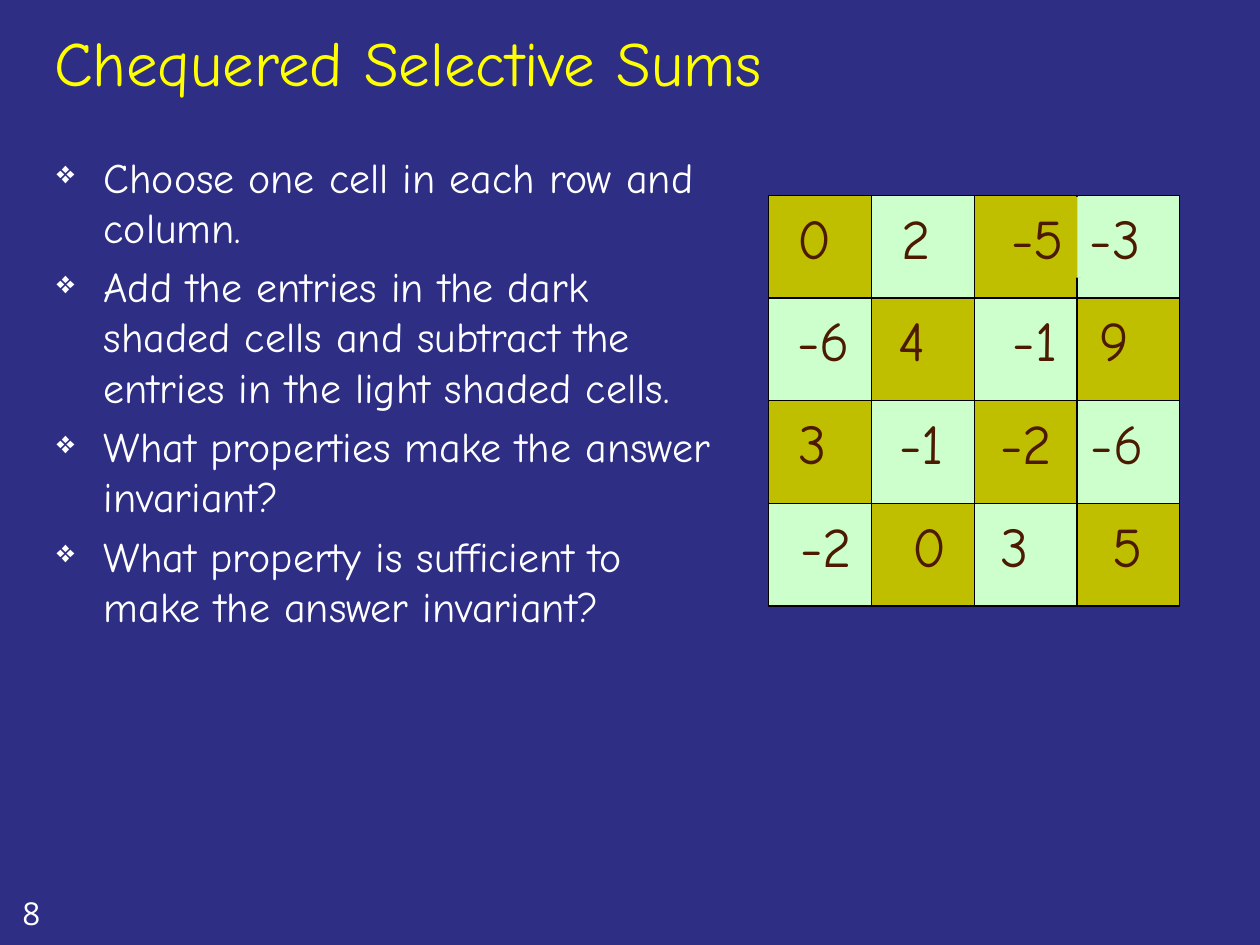
import pptx
import pptx.dml.color
import pptx.enum.shapes
import pptx.enum.text
import pptx.oxml
import pptx.oxml.ns
import pptx.util
from dataclasses import dataclass

Cm, Pt = pptx.util.Cm, pptx.util.Pt
Anchor = pptx.enum.text.MSO_ANCHOR
Fit = pptx.enum.text.MSO_AUTO_SIZE

TITLE = "Chequered Selective Sums"
TASKS = [
    "Choose one cell in each row and column.",
    "Add the entries in the dark shaded cells and subtract the entries in the light shaded cells.",
    "What properties make the answer invariant?",
    "What property is sufficient to make the answer invariant?",
]
PAGE = "8"

# Each entry is its number and the left edge of its label in cm.
BOARD = [
    [("0", 15.82), ("2", 17.93), ("-5", 20.14), ("-3", 21.72)],
    [("-6", 15.82), ("4", 17.86), ("-1", 20.17), ("9", 21.92)],
    [("3", 15.85), ("-1", 17.88), ("-2", 19.91), ("-6", 21.74)],
    [("-2", 15.88), ("0", 18.14), ("3", 19.91), ("5", 22.17)],
]
LEFT, TOP, SIDE = 15.5, 3.94, 2.07
WIDE = {"-1": 1.47, "-2": 1.65, "-3": 1.65, "-5": 1.65, "-6": 1.7}
DIGIT, HIGH, DROP = 1.17, 1.63, 0.03


@dataclass(frozen=True)
class Theme:
    back: str = "2E2E85"
    title: str = "FFFF00"
    text: str = "FFFFFF"
    dark: str = "BFBF00"
    light: str = "CCFFCC"
    ink: str = "4C1A00"
    edge: str = "000000"
    hand: str = "Comic Neue"
    plain: str = "Open Sans"
    head: int = 36
    body: int = 24
    entry: int = 32
    foot: int = 18


THEME = Theme()


def paint(fill, tone):
    fill.solid()
    fill.fore_color.rgb = pptx.dml.color.RGBColor.from_string(tone)


def apply(item, form):
    for name, value in form.items():
        setattr(item, name, value)


def write(shape, lines, size, tone, face=THEME.hand, frame=None, para=None):
    """Fill a shape with one paragraph per line; frame and para hold format values."""
    body = shape.text_frame
    apply(body, {"word_wrap": True, "vertical_anchor": Anchor.TOP, **(frame or {})})
    body.text = "\n".join(lines)
    for line in body.paragraphs:
        apply(line, {"alignment": pptx.enum.text.PP_ALIGN.LEFT, **(para or {})})
        font = line.runs[0].font
        apply(font, {"size": Pt(size), "name": face})
        paint(font.fill, tone)
    return body


def bullet(line):
    props = line._p.get_or_add_pPr()
    props.set("marL", str(Cm(0.95)))
    props.set("indent", str(-Cm(0.95)))
    for tag, key, value in [("buSzPct", "val", "75000"), ("buChar", "char", "❖")]:
        mark = pptx.oxml.parse_xml(f'<a:{tag} {pptx.oxml.ns.nsdecls("a")} {key}="{value}"/>')
        props.append(mark)


def box(shapes, left, top, width, height, tone):
    shape = shapes.add_shape(
        pptx.enum.shapes.MSO_SHAPE.RECTANGLE, Cm(left), Cm(top), Cm(width), Cm(height))
    shape.shadow.inherit = False
    paint(shape.fill, tone)
    shape.line.fill.background()
    return shape


def draw(shapes):
    """Draw the cells first, then the number labels over them."""
    cells = [
        (col, row, text, left, THEME.light if (row + col) % 2 else THEME.dark)
        for row, line in enumerate(BOARD)
        for col, (text, left) in enumerate(line)
    ]
    for col, row, text, left, tone in cells:
        cell = box(shapes, LEFT + col * SIDE, TOP + row * SIDE, SIDE, SIDE, tone)
        paint(cell.line.fill, THEME.edge)
        cell.line.width = Pt(0.75)
    for col, row, text, left, tone in cells:
        label = box(shapes, left, TOP + row * SIDE + DROP, WIDE.get(text, DIGIT), HIGH, tone)
        write(label, [text], THEME.entry, THEME.ink,
              frame={"word_wrap": False, "auto_size": Fit.SHAPE_TO_FIT_TEXT},
              para={"space_before": Pt(2), "space_after": Pt(2)})


def main():
    deck = pptx.Presentation()
    apply(deck, {"slide_width": Cm(25.4), "slide_height": Cm(19.05)})
    slide = deck.slides.add_slide(deck.slide_layouts[6])
    paint(slide.background.fill, THEME.back)
    shapes = slide.shapes

    foot = shapes.add_textbox(Cm(0.2), Cm(17.9), Cm(1.9), Cm(1.02))
    write(foot, [PAGE], THEME.foot, THEME.text, THEME.plain,
          frame={"auto_size": Fit.SHAPE_TO_FIT_TEXT}, para={"space_before": Pt(9)})

    head = shapes.add_textbox(Cm(0.84), Cm(0.43), Cm(21.59), Cm(1.7))
    write(head, [TITLE], THEME.head, THEME.title, frame={"vertical_anchor": Anchor.BOTTOM})

    tasks = shapes.add_textbox(Cm(0.89), Cm(2.92), Cm(14), Cm(10.59))
    body = write(tasks, TASKS, THEME.body, THEME.text, para={"space_before": Pt(5)})
    for line in body.paragraphs:
        bullet(line)

    draw(shapes.add_group_shape().shapes)
    deck.save("out.pptx")


if __name__ == "__main__":
    main()
